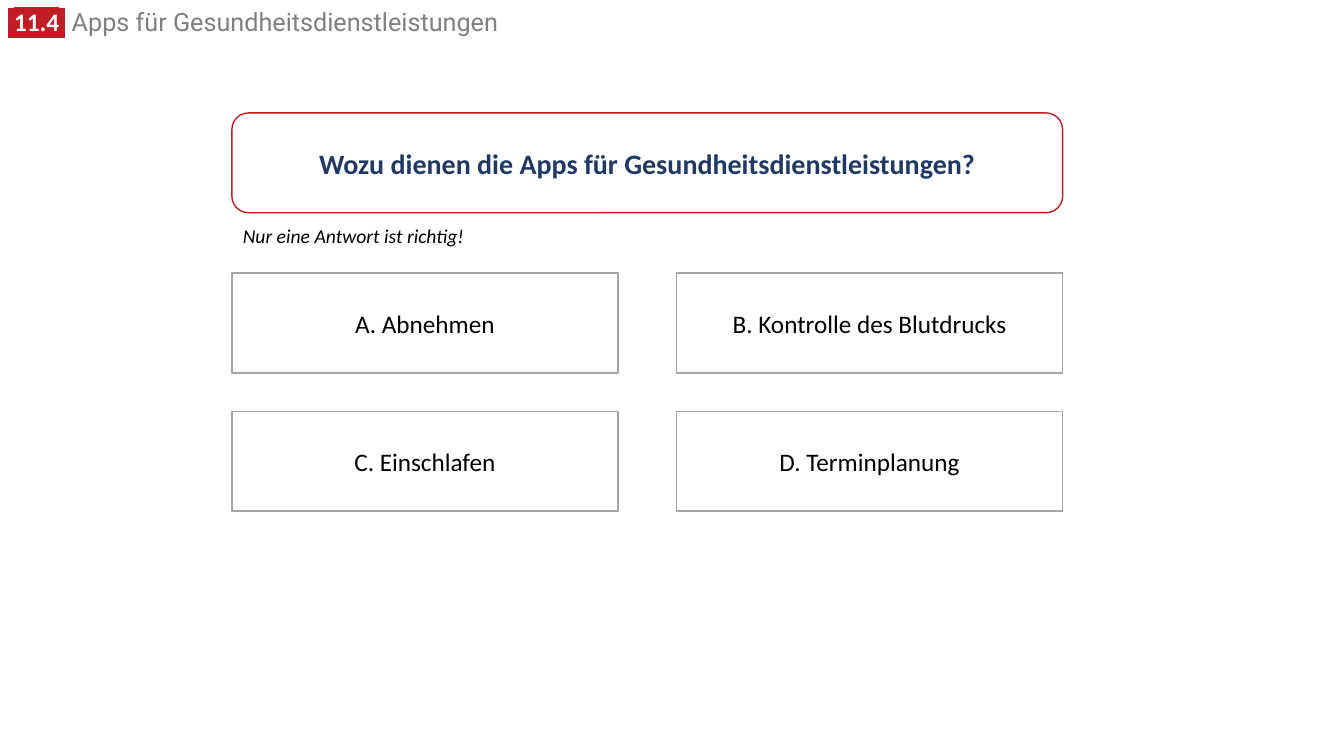
from lxml import etree
from pptx import Presentation
from pptx import util as u
from pptx.dml.color import RGBColor
from pptx.enum import shapes, text
from pptx.oxml import ns

RED = RGBColor(0xC0, 0x1E, 0x24)
NAVY = RGBColor(0x20, 0x38, 0x64)
GREY = RGBColor(0x80, 0x80, 0x80)
SILVER = RGBColor(0xA5, 0xA5, 0xA5)
BLACK = RGBColor(0, 0, 0)
WHITE = RGBColor(0xFF, 0xFF, 0xFF)

ANSWERS = [
    ["A. Abnehmen", "B. Kontrolle des Blutdrucks"],
    ["C. Einschlafen", "D. Terminplanung"],
]
CARD_HEIGHT = 0.99
ANSWER_WIDTH = 3.83
ROW_PITCH = 1.37


def style_font(font, size, color, bold=False, italic=False, name="Calibri"):
    font.name = name
    font.size = u.Pt(size)
    font.bold = bold
    font.italic = italic
    font.color.rgb = color


def highlight(span, color):
    fill = span.font._element.find(ns.qn("a:solidFill"))
    marker = etree.Element(ns.qn("a:highlight"))
    etree.SubElement(marker, ns.qn("a:srgbClr"), val=str(color))
    fill.addnext(marker)


def add_label(page, left, top, width, height, wrap):
    box = page.shapes.add_textbox(*map(u.Inches, (left, top, width, height)))
    box.text_frame.word_wrap = wrap
    box.text_frame.auto_size = text.MSO_AUTO_SIZE.SHAPE_TO_FIT_TEXT
    return box.text_frame.paragraphs[0]


def add_card(page, kind, left, top, width, line, wording, size, color, bold=False):
    card = page.shapes.add_shape(
        kind, *map(u.Inches, (left, top, width, CARD_HEIGHT))
    )
    card.shadow.inherit = False
    card.fill.solid()
    card.fill.fore_color.rgb = WHITE
    card.line.color.rgb = line
    card.line.width = u.Pt(1)
    frame = card.text_frame
    frame.word_wrap = True
    frame.vertical_anchor = text.MSO_ANCHOR.MIDDLE
    para = frame.paragraphs[0]
    para.text = wording
    para.alignment = text.PP_ALIGN.CENTER
    style_font(para.font, size, color, bold)


def add_header(page, left, top, width, height):
    para = add_label(page, left, top, width, height, True)
    para.line_spacing = 0.8
    for wording, name in [(" ", "Roboto"), ("11.4", "Calibri"), (" ", "Roboto")]:
        span = para.add_run()
        span.text = wording
        style_font(span.font, 18, WHITE, bold=True, name=name)
        highlight(span, RED)
    title = para.add_run()
    title.text = " Apps für Gesundheitsdienstleistungen"
    style_font(title.font, 18, GREY, name="Roboto")


def add_question(page, left, top, width):
    add_card(page, shapes.MSO_SHAPE.ROUNDED_RECTANGLE, left, top, width, RED,
             "Wozu dienen die Apps für Gesundheitsdienstleistungen?", 20, NAVY, True)
    hint = add_label(page, left + 0.01, top + 1.05, 2.42, 0.34, False)
    hint.text = "Nur eine Antwort ist richtig!"
    style_font(hint.font, 14, BLACK, italic=True)


def add_answers(page, left, top, width):
    column_pitch = width - ANSWER_WIDTH
    for row, answers in enumerate(ANSWERS):
        for column, answer in enumerate(answers):
            add_card(page, shapes.MSO_SHAPE.RECTANGLE,
                     left + column * column_pitch, top + row * ROW_PITCH,
                     ANSWER_WIDTH, SILVER, answer, 18, BLACK)


def main():
    deck = Presentation()
    deck.slide_width = u.Inches(13.33)
    deck.slide_height = u.Inches(7.5)
    page = deck.slides.add_slide(deck.slide_layouts[6])
    add_header(page, -0.02, 0.07, 9.52, 0.35)
    add_question(page, 2.3, 1.12, 8.24)
    add_answers(page, 2.3, 2.71, 8.24)
    deck.save("out.pptx")


if __name__ == "__main__":
    main()
